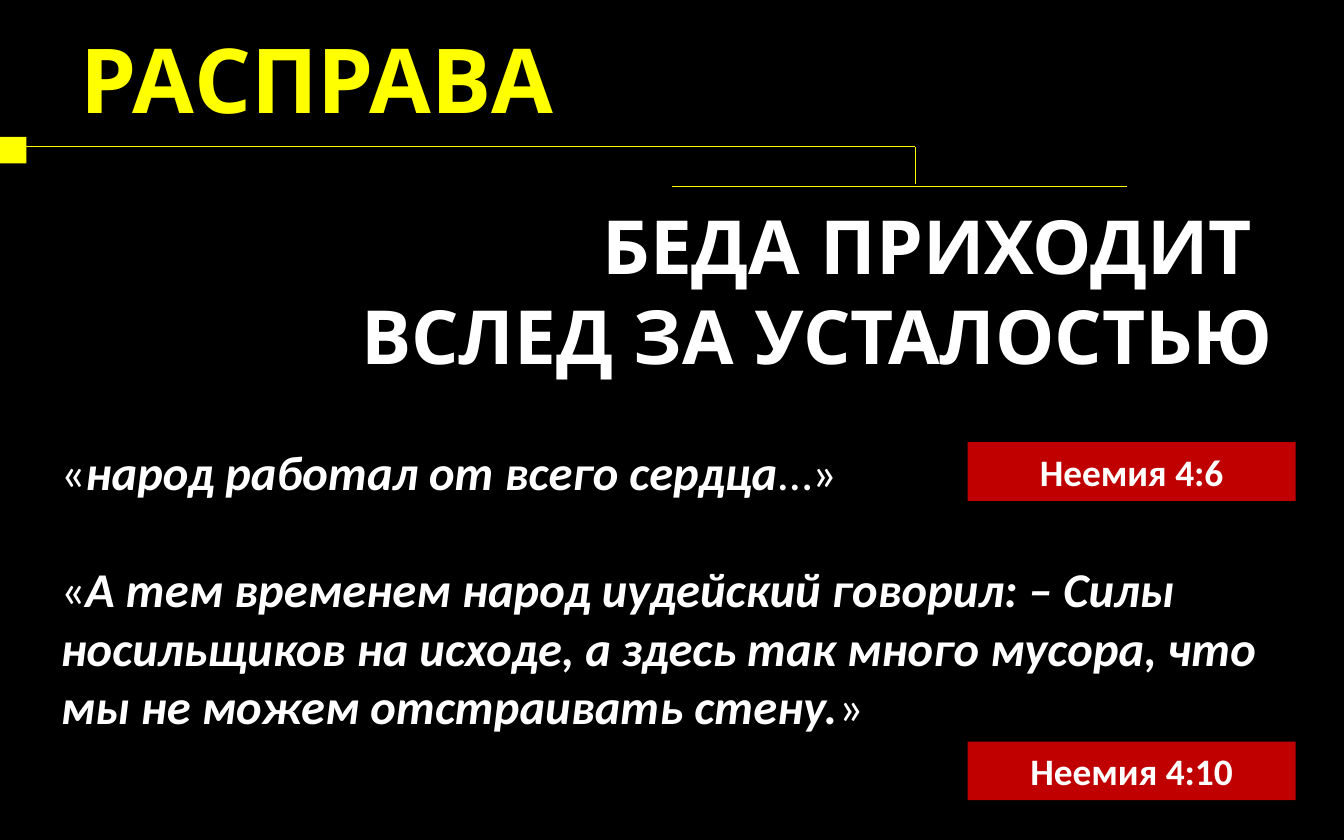
from pptx import Presentation, util as u
from pptx.dml.color import RGBColor
from pptx.enum import shapes, text
from pptx.oxml.ns import qn
from lxml import etree

BLACK = RGBColor(0, 0, 0)
WHITE = RGBColor(255, 255, 255)
YELLOW = RGBColor(255, 255, 0)
RED = RGBColor(192, 0, 0)

HEAD = dict(name="Quicksand", size=u.Pt(48), bold=True, color=YELLOW)
SUB = HEAD | dict(size=u.Pt(40), color=WHITE)
PLAIN = dict(name="Calibri", size=u.Pt(26), bold=False, italic=False, color=WHITE)
QUOTE = PLAIN | dict(bold=True, italic=True)
TAG = PLAIN | dict(size=u.Pt(20), bold=True)


def place(shape, box):
    """Move a shape to a box given in centimetres."""
    for key, val in zip(("left", "top", "width", "height"), box):
        setattr(shape, key, u.Cm(val))


def style(font, look):
    """Set the font attributes from a dict of values."""
    for key, val in look.items():
        if key == "color":
            font.color.rgb = val
        else:
            setattr(font, key, val)


def fill_text(frame, paras, align, anchor=text.MSO_ANCHOR.TOP, gap=0):
    """Write paragraphs of (words, look) runs with a gap between them."""
    form = dict(word_wrap=True, auto_size=text.MSO_AUTO_SIZE.NONE,
                vertical_anchor=anchor)
    for key, val in form.items():
        setattr(frame, key, val)
    for num, runs in enumerate(paras):
        para = frame.add_paragraph() if num else frame.paragraphs[0]
        para.alignment = align
        para.space_before = u.Pt(gap if num else 0)
        for words, look in runs:
            run = para.add_run()
            run.text = words
            style(run.font, look)


def add_block(slide, box, color):
    """Add a plain filled rectangle."""
    block = slide.shapes.add_shape(shapes.MSO_SHAPE.RECTANGLE, 0, 0, 0, 0)
    place(block, box)
    block.shadow.inherit = False
    block.fill.solid()
    block.fill.fore_color.rgb = color
    block.line.fill.background()
    return block


def add_title(slide, box):
    """Fill the title placeholder."""
    title = slide.shapes.title
    place(title, box)
    fill_text(title.text_frame, [[("РАСПРАВА", HEAD)]], text.PP_ALIGN.LEFT)


def add_sub(slide, box):
    """Add the right-aligned statement."""
    sub = slide.shapes.add_textbox(0, 0, 0, 0)
    place(sub, box)
    lines = ("БЕДА ПРИХОДИТ ", "ВСЛЕД ЗА УСТАЛОСТЬЮ")
    fill_text(sub.text_frame, [[(line, SUB)] for line in lines],
              text.PP_ALIGN.RIGHT)


def add_rule(slide, box):
    """Draw the stepped yellow rule with its square marker."""
    x, y, w, h = box
    bend, top, low = x + 17.3, y + 0.18, y + h
    ends = ((x, top, bend, top), (bend, top, bend, low - 0.05),
            (x + 12.7, low, x + w, low))
    for end in ends:
        line = slide.shapes.add_connector(
            shapes.MSO_CONNECTOR.STRAIGHT, *map(u.Cm, end))
        line.line.color.rgb = YELLOW
        line.line.width = u.Pt(0.75)
        etree.SubElement(line._element.spPr, qn("a:effectLst"))
    add_block(slide, (x, y, 0.5, 0.5), YELLOW)


def add_quotes(slide, box):
    """Fill the body placeholder with the quotes and add their references."""
    x, y, w, h = box
    body = slide.placeholders[1]
    place(body, box)
    quotes = (
        ("народ работал от всего сердца", "…»"),
        ("А тем временем народ иудейский говорил: – Силы носильщиков на "
         "исходе, а здесь так много мусора, что мы не можем отстраивать "
         "стену.", "»"))
    paras = [[("«", PLAIN), (words, QUOTE), (tail, PLAIN)]
             for words, tail in quotes]
    fill_text(body.text_frame, paras, text.PP_ALIGN.LEFT, gap=31.7)
    for para in body.text_frame.paragraphs:
        props = para._p.get_or_add_pPr()
        props.set("marL", "0")
        props.set("indent", "0")
        etree.SubElement(props, qn("a:buNone"))
    for words, drop in (("Неемия 4:6", 0.13), ("Неемия 4:10", h - 0.03)):
        tag = add_block(slide, (x + w - 6.2, y + drop, 6.2, 1.11), RED)
        fill_text(tag.text_frame, [[(words, TAG)]], text.PP_ALIGN.CENTER,
                  text.MSO_ANCHOR.MIDDLE)


def main():
    """Build and save the slide."""
    deck = Presentation()
    deck.slide_width, deck.slide_height = u.Cm(25.4), u.Cm(15.88)
    slide = deck.slides.add_slide(deck.slide_layouts[1])
    slide.background.fill.solid()
    slide.background.fill.fore_color.rgb = BLACK
    add_title(slide, (1.27, 0.33, 22.8, 2.31))
    add_sub(slide, (3.71, 3.66, 20.6, 3.68))
    add_rule(slide, (0, 2.59, 21.29, 0.94))
    add_quotes(slide, (0.89, 8.23, 23.6, 5.82))
    deck.save("out.pptx")


if __name__ == "__main__":
    main()
